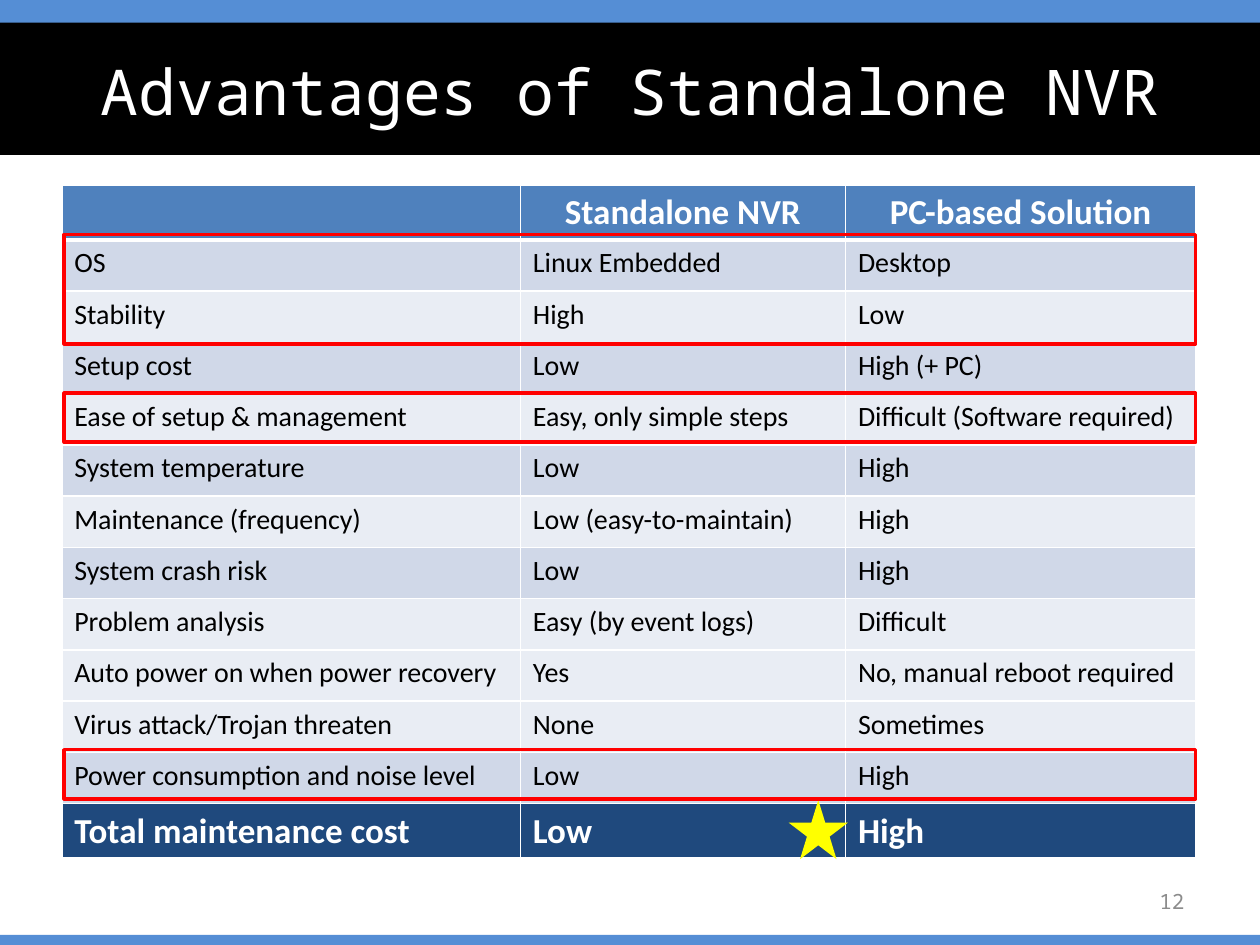
from dataclasses import dataclass

from lxml.etree import SubElement
from pptx import Presentation
from pptx.dml.color import RGBColor
from pptx.enum.shapes import MSO_SHAPE as Shape
from pptx.enum.text import MSO_ANCHOR as Anchor, PP_ALIGN as Align
from pptx.oxml.ns import qn
from pptx.util import Inches, Pt


@dataclass(frozen=True)
class Theme:
    sans: str = "Calibri"
    mono: str = "Noto Sans Mono"
    white: str = "FFFFFF"
    black: str = "000000"
    gray: str = "8C8C8C"
    stripe: str = "558ED5"
    header: str = "4F81BD"
    dark_band: str = "D0D8E8"
    light_band: str = "E9EDF4"
    total: str = "1F497D"
    highlight: str = "FF0000"
    star: str = "FFFF00"
    title_size: int = 36
    strong_size: int = 20
    body_size: int = 16
    number_size: int = 12


THEME = Theme()
COLUMNS = (3.64, 2.58, 2.78)
STRONG_HEIGHT = 0.43
BODY_HEIGHT = 0.407
EXTRA_LIGHT_ROW = 9
ROWS = (
    ("", "Standalone NVR", "PC-based Solution"),
    ("OS", "Linux Embedded", "Desktop"),
    ("Stability", "High", "Low"),
    ("Setup cost", "Low", "High (+ PC)"),
    ("Ease of setup & management", "Easy, only simple steps", "Difficult (Software required)"),
    ("System temperature", "Low", "High"),
    ("Maintenance (frequency)", "Low (easy-to-maintain)", "High"),
    ("System crash risk", "Low", "High"),
    ("Problem analysis", "Easy (by event logs)", "Difficult"),
    ("Auto power on when power recovery", "Yes", "No, manual reboot required"),
    ("Virus attack/Trojan threaten", "None", "Sometimes"),
    ("Power consumption and noise level", "Low", "High"),
    ("Total maintenance cost", "Low", "High"),
)


def write_text(frame, text, *, size, color, font=THEME.sans, bold=False, align=Align.LEFT):
    para = frame.paragraphs[0]
    para.alignment = align
    span = para.add_run()
    span.text = text
    span.font.name = font
    span.font.size = Pt(size)
    span.font.bold = bold
    span.font.color.rgb = RGBColor.from_string(color)


def add_text(page, place, text, **style):
    box = page.shapes.add_textbox(*map(Inches, place))
    box.text_frame.word_wrap = True
    box.text_frame.vertical_anchor = Anchor.MIDDLE
    write_text(box.text_frame, text, font=THEME.mono, **style)


def add_figure(page, kind, place, fill=None, line=None):
    figure = page.shapes.add_shape(kind, *map(Inches, place))
    figure.shadow.inherit = False
    if fill:
        figure.fill.solid()
        figure.fill.fore_color.rgb = RGBColor.from_string(fill)
    else:
        figure.fill.background()
    if line:
        figure.line.color.rgb = RGBColor.from_string(line)
        figure.line.width = Pt(2)
    else:
        figure.line.fill.background()


def set_borders(cell, top, bottom):
    properties = cell._tc.get_or_add_tcPr()
    for side, width in (("L", 1), ("R", 1), ("T", top), ("B", bottom)):
        line = SubElement(properties, qn(f"a:ln{side}"), w=str(Pt(width)))
        fill = SubElement(line, qn("a:solidFill"))
        SubElement(fill, qn("a:srgbClr"), val=THEME.white)


def row_fill(index):
    if index == 0:
        return THEME.header
    if index == len(ROWS) - 1:
        return THEME.total
    light = index % 2 == 0 or index == EXTRA_LIGHT_ROW
    return THEME.light_band if light else THEME.dark_band


def add_comparison(page):
    place = map(Inches, (0.49, 1.47, 9, 5.34))
    table = page.shapes.add_table(len(ROWS), len(COLUMNS), *place).table
    for column, width in zip(table.columns, COLUMNS):
        column.width = Inches(width)
    for index, texts in enumerate(ROWS):
        strong = index in (0, len(ROWS) - 1)
        table.rows[index].height = Inches(STRONG_HEIGHT if strong else BODY_HEIGHT)
        for cell, text in zip(table.rows[index].cells, texts):
            set_borders(cell, top=3 if index == 1 else 1, bottom=3 if index == 0 else 1)
            cell.fill.solid()
            cell.fill.fore_color.rgb = RGBColor.from_string(row_fill(index))
            if text:
                write_text(
                    cell.text_frame,
                    text,
                    size=THEME.strong_size if strong else THEME.body_size,
                    color=THEME.white if strong else THEME.black,
                    bold=strong,
                    align=Align.CENTER if index == 0 else Align.LEFT,
                )


def main():
    deck = Presentation()
    deck.slide_width, deck.slide_height = Inches(10), Inches(7.5)
    page = deck.slides.add_slide(deck.slide_layouts[6])

    add_figure(page, Shape.RECTANGLE, (0, 0, 10, 1.23), fill=THEME.black)
    add_figure(page, Shape.RECTANGLE, (-0.01, -0.02, 10.02, 0.2), fill=THEME.stripe)
    add_figure(page, Shape.RECTANGLE, (-0.02, 7.42, 10.02, 0.08), fill=THEME.stripe)
    add_text(page, (0.5, 0.21, 9, 1.02), "Advantages of Standalone NVR",
             size=THEME.title_size, color=THEME.white, align=Align.CENTER)
    add_text(page, (7.17, 6.95, 2.33, 0.4), "12",
             size=THEME.number_size, color=THEME.gray, align=Align.RIGHT)
    add_comparison(page)
    add_figure(page, Shape.STAR_5_POINT, (6.26, 6.35, 0.47, 0.47), fill=THEME.star)
    for top, height in ((1.86, 0.87), (3.12, 0.39), (5.95, 0.39)):
        add_figure(page, Shape.RECTANGLE, (0.51, top, 8.98, height), line=THEME.highlight)

    deck.save("out.pptx")


if __name__ == "__main__":
    main()
